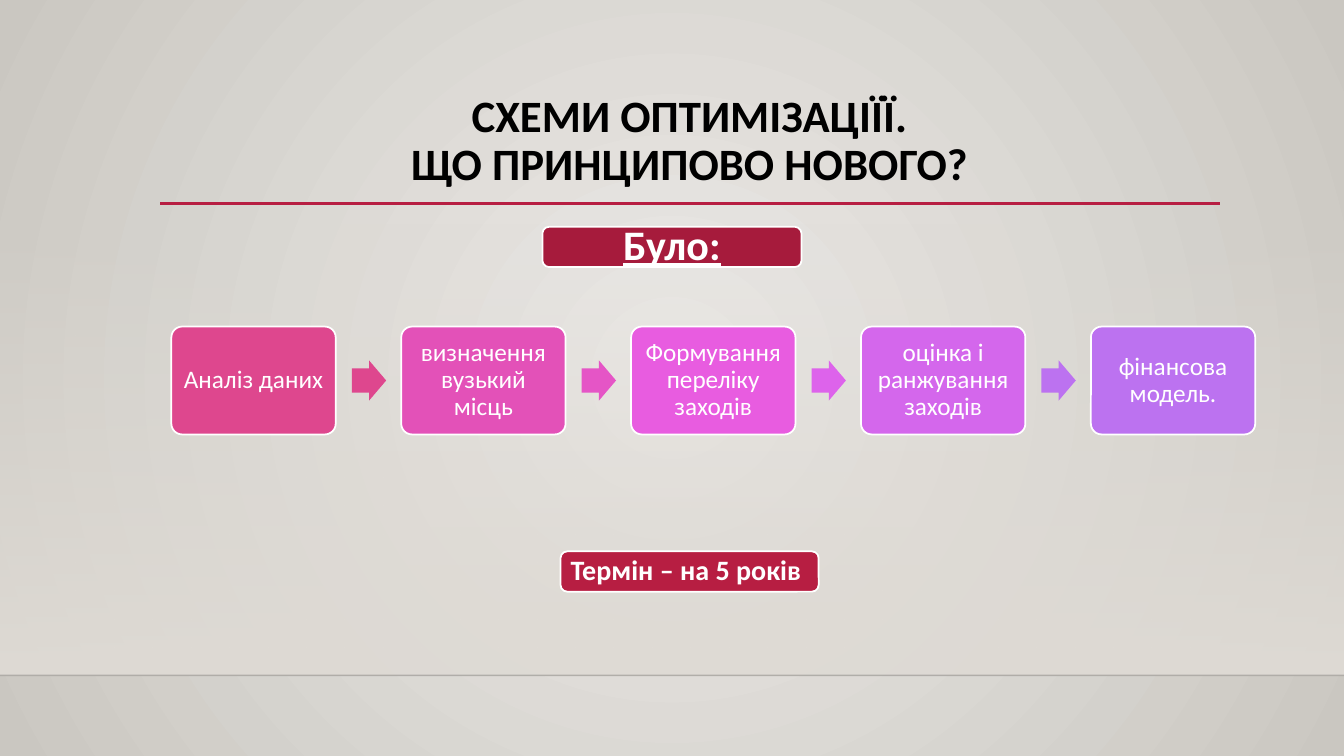
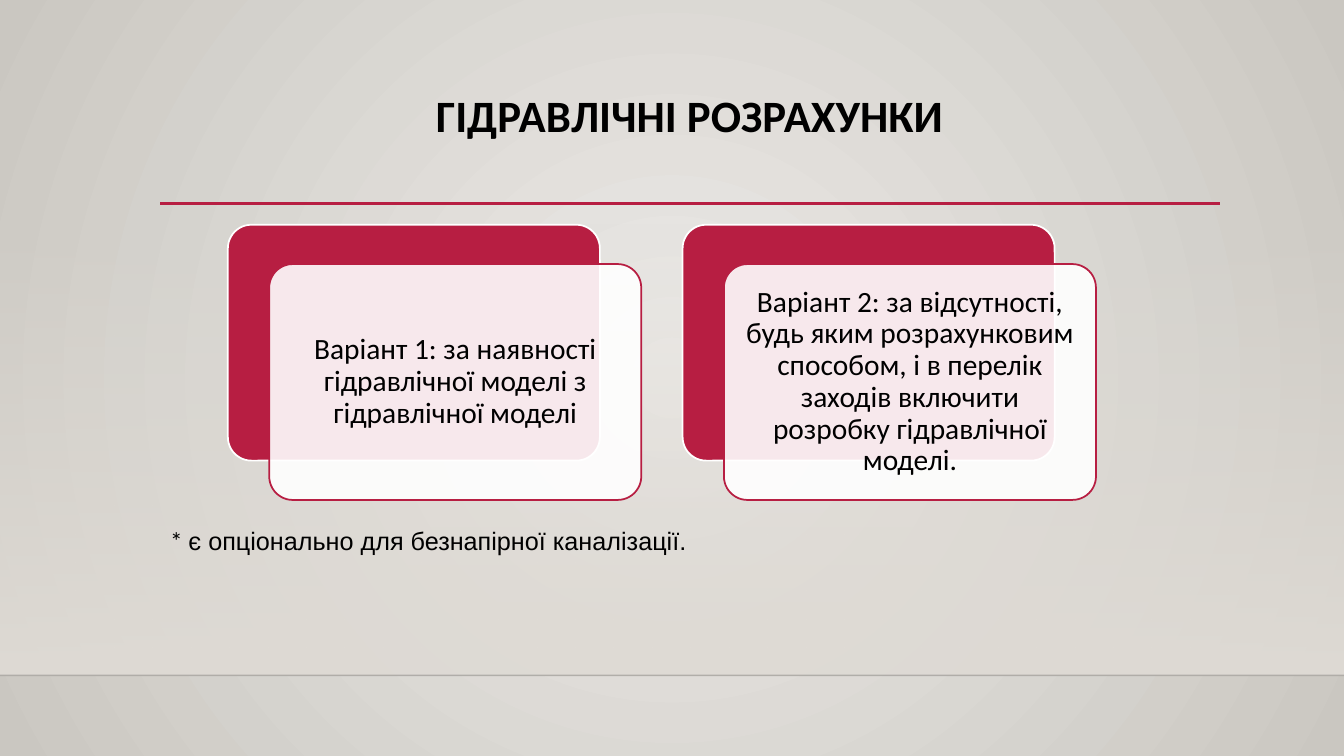
from dataclasses import dataclass
from typing import Optional

from lxml.etree import SubElement
from pptx import Presentation
from pptx.dml.color import RGBColor
from pptx.enum.shapes import MSO_CONNECTOR, MSO_SHAPE
from pptx.enum.text import MSO_ANCHOR, PP_ALIGN
from pptx.oxml import parse_xml
from pptx.oxml.ns import nsdecls, qn
from pptx.util import Inches, Pt


@dataclass(frozen=True)
class Theme:
    crimson: str = "B71E42"
    dark_crimson: str = "A61B3C"
    white: str = "FFFFFF"
    black: str = "000000"
    page_center: str = "ECEAE7"
    page_edge: str = "CAC7C1"
    band: str = "DFDBD5"
    font: str = "Calibri"
    note_font: str = "Arial"
    title_size: float = 32
    heading_size: float = 30
    option_size: float = 21
    term_size: float = 20
    body_size: float = 18
    outline: float = 1.25


@dataclass(frozen=True)
class Area:
    left: float
    top: float
    width: float
    height: float

    def lengths(self) -> tuple:
        return tuple(Inches(n) for n in (self.left, self.top, self.width, self.height))


@dataclass(frozen=True)
class Step:
    text: str
    color: str
    arrow_color: Optional[str] = None


THEME = Theme()
PAGE_WIDTH, PAGE_HEIGHT = 13.33, 7.5
FLOOR_TOP = 6.7

STEPS = [
    Step("Аналіз даних", "DE478E", "DE478E"),
    Step("визначення вузький місць", "E351B8", "E555C6"),
    Step("Формування переліку заходів", "E85CE0", "DD63EB"),
    Step("оцінка і ранжування заходів", "D467EC", "BC72F0"),
    Step("фінансова модель.", "BC72F0"),
]
OPTIONS = [
    "Варіант 1: за наявності гідравлічної моделі з гідравлічної моделі",
    "Варіант 2: за відсутності, будь яким розрахунковим способом, "
    "і в перелік заходів включити розробку гідравлічної моделі.",
]


# Fills and text
def set_gradient(owner, stops: list, direction: str) -> None:
    """Replace the owner's gradient; stops are (position, colour, opacity) in percent."""
    stop_xml = "".join(
        f'<a:gs pos="{position * 1000}"><a:srgbClr val="{color}">'
        f'<a:alpha val="{opacity * 1000}"/></a:srgbClr></a:gs>'
        for position, color, opacity in stops)
    gradient = owner.element.xpath(".//a:gradFill")[0]
    gradient.getparent().replace(gradient, parse_xml(
        f'<a:gradFill {nsdecls("a")} rotWithShape="1">'
        f"<a:gsLst>{stop_xml}</a:gsLst>{direction}</a:gradFill>"))


def set_opacity(shape, percent: int) -> None:
    color = shape.element.xpath("./p:spPr//a:srgbClr")[0]
    SubElement(color, qn("a:alpha")).set("val", str(percent * 1000))


def add_span(para, text: str, *, size: float, color: str, font: str = THEME.font,
             bold: bool = False, underline: bool = False) -> None:
    for index, line in enumerate(text.split("\n")):
        if index:
            para.add_line_break()
        span = para.add_run()
        span.text = line
        span.font.name = font
        span.font.size = Pt(size)
        span.font.bold = bold
        span.font.underline = underline
        span.font.color.rgb = RGBColor.from_string(color)


def write_text(box, text: str, *, align=PP_ALIGN.CENTER, anchor=MSO_ANCHOR.MIDDLE,
               inset: Optional[float] = None, **style) -> None:
    frame = box.text_frame
    frame.word_wrap = True
    frame.vertical_anchor = anchor
    if inset is not None:
        frame.margin_left = frame.margin_right = Inches(inset)
        frame.margin_top = frame.margin_bottom = Inches(inset)
    para = frame.paragraphs[0]
    para.alignment = align
    para.line_spacing = 0.9
    add_span(para, text, **style)


# Shapes and lines
def add_block(page, kind, area: Area, fill: str, *, line: Optional[str] = None,
              adjust: tuple = ()):
    block = page.shapes.add_shape(kind, *area.lengths())
    block.shadow.inherit = False
    block.fill.solid()
    block.fill.fore_color.rgb = RGBColor.from_string(fill)
    if line:
        block.line.color.rgb = RGBColor.from_string(line)
        block.line.width = Pt(THEME.outline)
    else:
        block.line.fill.background()
    for index, value in enumerate(adjust):
        block.adjustments[index] = value
    return block


def add_rule(page, left: float, right: float, top: float, color: str, width: float):
    rule = page.shapes.add_connector(
        MSO_CONNECTOR.STRAIGHT, Inches(left), Inches(top), Inches(right), Inches(top))
    rule.line.color.rgb = RGBColor.from_string(color)
    rule.line.width = Pt(width)
    SubElement(rule.element.spPr, qn("a:effectLst"))
    return rule


# Shared page frame
def add_page(deck, title: str):
    page = deck.slides.add_slide(deck.slide_layouts[6])
    page.background.fill.gradient()
    set_gradient(page, [(0, THEME.page_center, 100), (100, THEME.page_edge, 100)],
                 '<a:path path="circle"><a:fillToRect l="50000" t="50000" '
                 'r="50000" b="50000"/></a:path>')

    band = add_block(page, MSO_SHAPE.RECTANGLE,
                     Area(0, 2.21, PAGE_WIDTH, FLOOR_TOP - 2.21), THEME.band)
    band.fill.gradient()
    set_gradient(band, [(0, THEME.band, 0), (100, THEME.band, 100)],
                 '<a:lin ang="5400000" scaled="0"/>')
    set_opacity(add_rule(page, 0, PAGE_WIDTH, FLOOR_TOP, THEME.black, 1), 20)
    add_rule(page, 1.59, 12.1, 2.02, THEME.crimson, 2.5)

    box = page.shapes.add_textbox(*Area(1.59, 0.88, 10.5, 1.15).lengths())
    write_text(box, title, anchor=MSO_ANCHOR.TOP, size=THEME.title_size,
               color=THEME.black, bold=True)
    return page


# Slide 1: process chain
def add_steps(page) -> None:
    left, top, width, height, pitch = 1.7, 3.24, 1.63, 1.07, 2.28
    arrow_width, arrow_height, arrow_gap = 0.34, 0.4, 0.16
    for index, step in enumerate(STEPS):
        x = left + index * pitch
        card = add_block(page, MSO_SHAPE.ROUNDED_RECTANGLE, Area(x, top, width, height),
                         step.color, line=THEME.white, adjust=(0.1,))
        write_text(card, step.text, inset=0.07, size=THEME.body_size, color=THEME.white)
        if step.arrow_color:
            area = Area(x + width + arrow_gap, top + (height - arrow_height) / 2,
                        arrow_width, arrow_height)
            add_block(page, MSO_SHAPE.RIGHT_ARROW, area, step.arrow_color,
                      adjust=(0.6, 0.5))


def build_schemes(deck) -> None:
    page = add_page(deck, "СХЕМИ ОПТИМІЗАЦІЇЇ.\nЩО ПРИНЦИПОВО НОВОГО?")
    heading = add_block(page, MSO_SHAPE.ROUNDED_RECTANGLE, Area(5.38, 2.25, 2.57, 0.4),
                        THEME.dark_crimson, line=THEME.white)
    write_text(heading, "Було:", inset=0.12, size=THEME.heading_size,
               color=THEME.white, bold=True, underline=True)
    add_steps(page)
    term = add_block(page, MSO_SHAPE.ROUNDED_RECTANGLE, Area(5.56, 5.47, 2.56, 0.4),
                     THEME.crimson, line=THEME.white)
    write_text(term, "Термін – на 5 років", align=PP_ALIGN.LEFT, inset=0.08,
               size=THEME.term_size, color=THEME.white, bold=True)


# Slide 2: two options
def add_options(page) -> None:
    left, top, width, height, pitch = 2.26, 2.23, 3.69, 2.34, 4.51
    shift_x, shift_y = 0.41, 0.39
    for index, text in enumerate(OPTIONS):
        x = left + index * pitch
        add_block(page, MSO_SHAPE.ROUNDED_RECTANGLE, Area(x, top, width, height),
                  THEME.crimson, line=THEME.white, adjust=(0.1,))
        card = add_block(page, MSO_SHAPE.ROUNDED_RECTANGLE,
                         Area(x + shift_x, top + shift_y, width, height),
                         THEME.white, line=THEME.crimson, adjust=(0.1,))
        set_opacity(card, 90)
        write_text(card, text, inset=0.09, size=THEME.option_size, color=THEME.black)


def build_calculations(deck) -> None:
    page = add_page(deck, "ГІДРАВЛІЧНІ РОЗРАХУНКИ")
    add_options(page)
    note = page.shapes.add_textbox(*Area(1.59, 5.16, 5.4, 0.71).lengths())
    note.text_frame.word_wrap = False
    para = note.text_frame.paragraphs[0]
    add_span(para, "* ", size=THEME.body_size, color=THEME.black)
    add_span(para, "є опціонально для безнапірної каналізації.",
             size=THEME.body_size, color=THEME.black, font=THEME.note_font)


def main() -> None:
    deck = Presentation()
    deck.slide_width, deck.slide_height = Inches(PAGE_WIDTH), Inches(PAGE_HEIGHT)
    build_schemes(deck)
    build_calculations(deck)
    deck.save("out.pptx")


if __name__ == "__main__":
    main()
